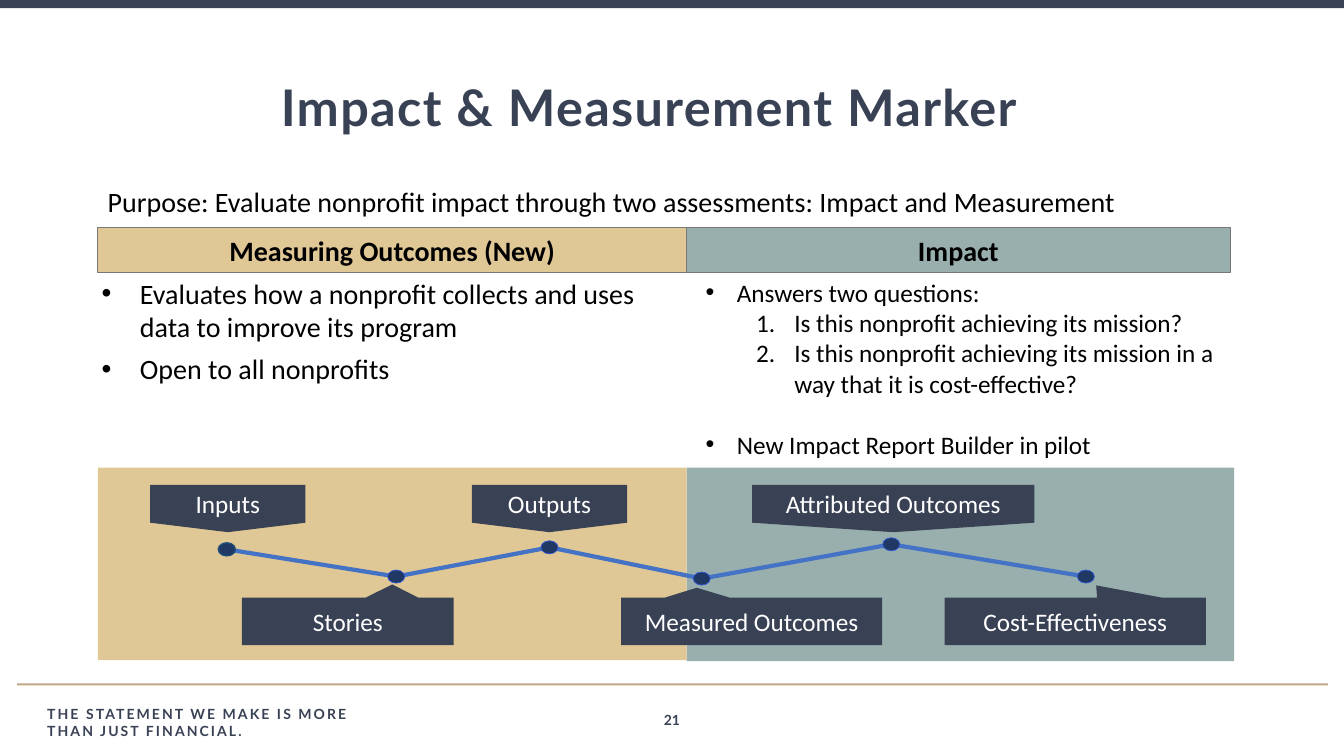
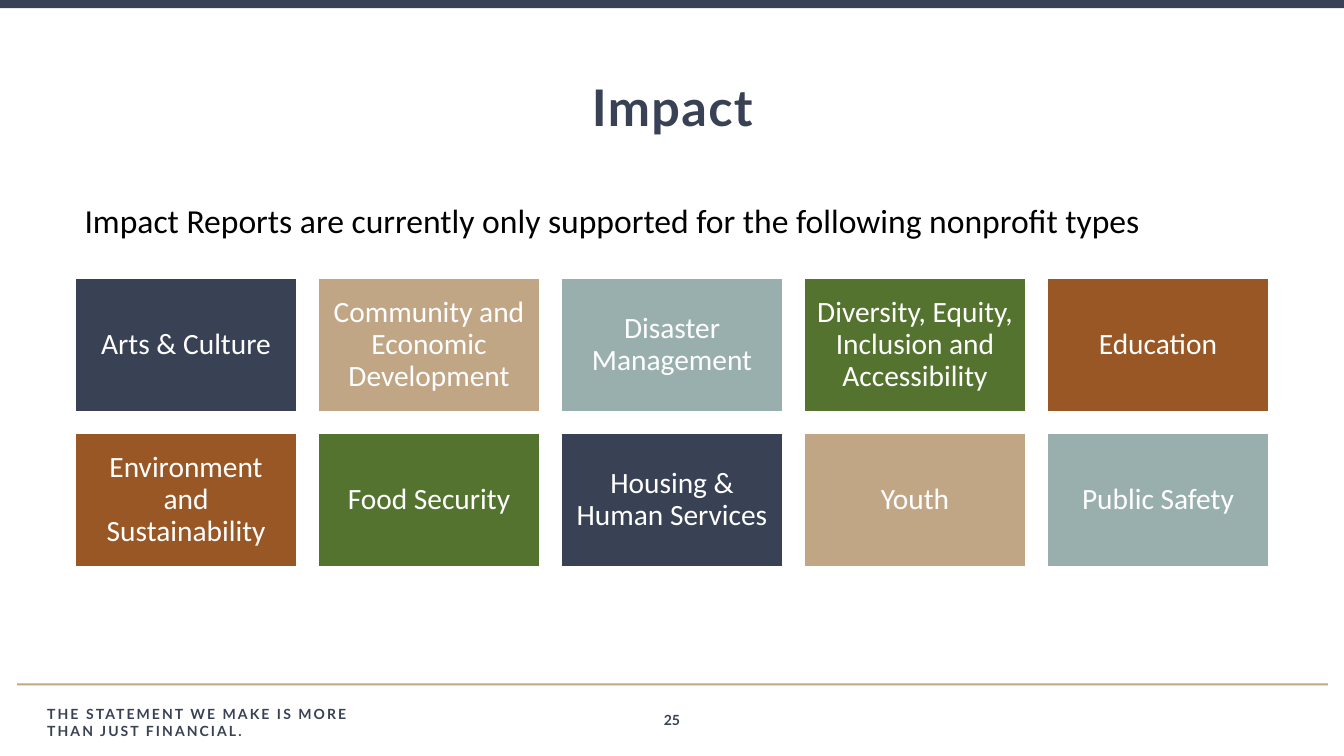
from dataclasses import dataclass
from itertools import pairwise

from lxml.etree import SubElement
from pptx import Presentation
from pptx.dml.color import RGBColor
from pptx.enum.shapes import MSO_CONNECTOR, MSO_SHAPE as Shape
from pptx.enum.text import MSO_ANCHOR as Anchor, PP_ALIGN as Align
from pptx.oxml.ns import qn
from pptx.util import Inches, Pt


@dataclass(frozen=True)
class Theme:
    navy: str = "394155"
    tan: str = "C1A686"
    sand: str = "E0C796"
    sage: str = "99AFAE"
    green: str = "54732F"
    rust: str = "985725"
    gray: str = "787878"
    line_blue: str = "4472C4"
    dot_fill: str = "203864"
    dot_edge: str = "325ADC"
    first_dot_edge: str = "1F4E79"
    black: str = "000000"
    white: str = "FFFFFF"
    heading_font: str = "Lato"
    body_font: str = "Calibri"
    title_size: float = 36
    lead_size: float = 24
    tile_size: float = 21
    body_size: float = 20
    label_size: float = 18
    footer_size: float = 10


THEME = Theme()


@dataclass(frozen=True)
class Style:
    size: float
    color: str = THEME.black
    font: str = THEME.body_font
    bold: bool = False
    tracking: float = 0


TITLE = Style(THEME.title_size, THEME.navy, THEME.heading_font, True, 1)
FOOTER = Style(THEME.footer_size, THEME.navy, THEME.heading_font, True, 1.5)
PAGE_NUMBER = Style(THEME.footer_size, THEME.navy, THEME.heading_font, True)
LEAD = Style(THEME.lead_size)
BODY = Style(THEME.body_size)
HEADER = Style(THEME.body_size, bold=True)
POINT = Style(THEME.label_size)
LABEL = Style(THEME.label_size, THEME.white)
TILE = Style(THEME.tile_size, THEME.white)


def rgb(value):
    return RGBColor.from_string(value)


def write(frame, text, style, align=Align.LEFT):
    """Fill a text frame, one paragraph per line of text."""
    frame.word_wrap = True
    frame.text = text
    for para in frame.paragraphs:
        para.alignment = align
        for span in para.runs:
            span.font.name = style.font
            span.font.size = Pt(style.size)
            span.font.bold = style.bold
            span.font.color.rgb = rgb(style.color)
            if style.tracking:
                span.font._element.set("spc", str(round(style.tracking * 100)))


def add_text(page, place, text, style, align=Align.LEFT):
    box = page.shapes.add_textbox(*map(Inches, place))
    write(box.text_frame, text, style, align)
    return box.text_frame


def add_block(page, place, fill, kind=Shape.RECTANGLE, edge=None, edge_width=0.5):
    block = page.shapes.add_shape(kind, *map(Inches, place))
    block.shadow.inherit = False
    block.fill.solid()
    block.fill.fore_color.rgb = rgb(fill)
    if edge:
        block.line.color.rgb = rgb(edge)
        block.line.width = Pt(edge_width)
    else:
        block.line.fill.background()
    return block


def label_block(block, text, style):
    block.text_frame.vertical_anchor = Anchor.MIDDLE
    write(block.text_frame, text, style, Align.CENTER)


def add_segment(page, start, end):
    ends = map(Inches, (*start, *end))
    segment = page.shapes.add_connector(MSO_CONNECTOR.STRAIGHT, *ends)
    segment.line.color.rgb = rgb(THEME.line_blue)
    segment.line.width = Pt(3)
    SubElement(segment._element.spPr, qn("a:effectLst"))


def set_marker(para, indent, hanging, numbered=False):
    """Give a paragraph a hanging bullet or an automatic number."""
    props = para._p.get_or_add_pPr()
    props.set("marL", str(Inches(indent)))
    props.set("indent", str(-Inches(hanging)))
    SubElement(props, qn("a:buFont"), typeface="+mj-lt" if numbered else "Arial")
    if numbered:
        SubElement(props, qn("a:buAutoNum"), type="arabicPeriod")
    else:
        SubElement(props, qn("a:buChar"), char="•")


def add_page(deck, title, title_left, number):
    """Add a slide with the shared band, title, rule and footer."""
    page = deck.slides.add_slide(deck.slide_layouts[6])
    add_block(page, (0, 0, 13.33, 0.08), THEME.navy)
    add_block(page, (0.17, 6.78, 13, 0.02), THEME.tan)
    add_text(page, (0.37, 6.95, 5.57, 0.4),
             "THE STATEMENT WE MAKE IS MORE\nTHAN JUST FINANCIAL.", FOOTER)
    add_text(page, (6.36, 7.01, 0.61, 0.29), str(number), PAGE_NUMBER, Align.CENTER)
    add_text(page, (title_left, 0.71, 12.14, 0.71), title, TITLE, Align.CENTER)
    return page


def add_assessments(page):
    for left, width, fill, text in (
        (0.97, 5.84, THEME.sand, "Measuring Outcomes (New)"),
        (6.81, 5.39, THEME.sage, "Impact"),
    ):
        header = add_block(page, (left, 2.26, width, 0.44), fill, edge=THEME.gray)
        label_block(header, text, HEADER)

    measuring = add_text(
        page, (0.91, 2.69, 5.7, 1.19),
        "Evaluates how a nonprofit collects and uses data to improve its program\n"
        "Open to all nonprofits", BODY)
    for para in measuring.paragraphs:
        set_marker(para, 0.38, 0.38)
        para.space_after = Pt(6)

    impact = add_text(
        page, (6.9, 2.7, 5.25, 1.92),
        "Answers two questions:\n"
        "Is this nonprofit achieving its mission?\n"
        "Is this nonprofit achieving its mission in a way that it is cost-effective?\n"
        "New Impact Report Builder in pilot", POINT)
    intro, *questions, pilot = impact.paragraphs
    for para in (intro, pilot):
        set_marker(para, 0.31, 0.31)
    for para in questions:
        para.level = 1
        set_marker(para, 0.88, 0.38, numbered=True)
    pilot.space_before = Pt(22)


def add_pathway(page):
    """Draw the path from inputs to cost-effectiveness."""
    add_block(page, (6.81, 4.64, 5.43, 1.92), THEME.sage)
    add_block(page, (0.97, 4.64, 5.84, 1.91), THEME.sand)

    for left, width, text in (
        (1.49, 1.54, "Inputs"),
        (4.68, 1.54, "Outputs"),
        (7.46, 2.8, "Attributed Outcomes"),
    ):
        tag = add_block(page, (left, 4.81, width, 0.47), THEME.navy,
                        Shape.FLOWCHART_OFFPAGE_CONNECTOR)
        label_block(tag, text, LABEL)

    for left, width, tip, text in (
        (2.4, 2.1, (0.21, -0.78), "Stories"),
        (6.16, 2.59, (-0.21, -0.71), "Measured Outcomes"),
        (9.37, 2.59, (0.08, -0.76), "Cost-Effectiveness"),
    ):
        callout = add_block(page, (left, 5.93, width, 0.47), THEME.navy,
                            Shape.RECTANGULAR_CALLOUT)
        callout.adjustments[0], callout.adjustments[1] = tip
        label_block(callout, text, LABEL)

    dot_width, dot_height = 0.17, 0.13
    stops = [(2.25, 5.45), (3.93, 5.72), (5.45, 5.43),
             (6.96, 5.74), (8.84, 5.4), (10.77, 5.72)]
    for start, end in pairwise(stops):
        add_segment(page, start, end)
    for index, (x, y) in enumerate(stops):
        edge, width = (THEME.dot_edge, 0.5) if index else (THEME.first_dot_edge, 1)
        place = (x - dot_width / 2, y - dot_height / 2, dot_width, dot_height)
        add_block(page, place, THEME.dot_fill, Shape.OVAL, edge, width)


def add_tiles(page, tiles, columns=5):
    width, height, gap = 2.19, 1.32, 0.22
    for index, (text, fill) in enumerate(tiles):
        row, column = divmod(index, columns)
        place = (0.75 + column * (width + gap), 2.76 + row * (height + gap), width, height)
        tile = add_block(page, place, fill, edge=THEME.white, edge_width=1)
        label_block(tile, text, TILE)
        frame = tile.text_frame
        frame.margin_left = frame.margin_right = Inches(0.09)
        frame.margin_top = frame.margin_bottom = Inches(0.09)
        frame.paragraphs[0].line_spacing = 0.9


def build_measurement_page(deck):
    page = add_page(deck, "Impact & Measurement Marker", 0.37, 21)
    add_text(page, (0.97, 1.78, 11.23, 0.44),
             "Purpose: Evaluate nonprofit impact through two assessments: "
             "Impact and Measurement", BODY)
    add_assessments(page)
    add_pathway(page)


def build_impact_page(deck):
    page = add_page(deck, "Impact", 0.6, 25)
    add_text(page, (0.74, 1.93, 11.04, 0.5),
             "Impact Reports are currently only supported for the following "
             "nonprofit types", LEAD)
    add_tiles(page, (
        ("Arts & Culture", THEME.navy),
        ("Community and Economic Development", THEME.tan),
        ("Disaster Management", THEME.sage),
        ("Diversity, Equity, Inclusion and Accessibility", THEME.green),
        ("Education", THEME.rust),
        ("Environment and Sustainability", THEME.rust),
        ("Food Security", THEME.green),
        ("Housing & Human Services", THEME.navy),
        ("Youth", THEME.tan),
        ("Public Safety", THEME.sage),
    ))


def main():
    deck = Presentation()
    deck.slide_width, deck.slide_height = Inches(13.33), Inches(7.5)
    build_measurement_page(deck)
    build_impact_page(deck)
    deck.save("out.pptx")


if __name__ == "__main__":
    main()
